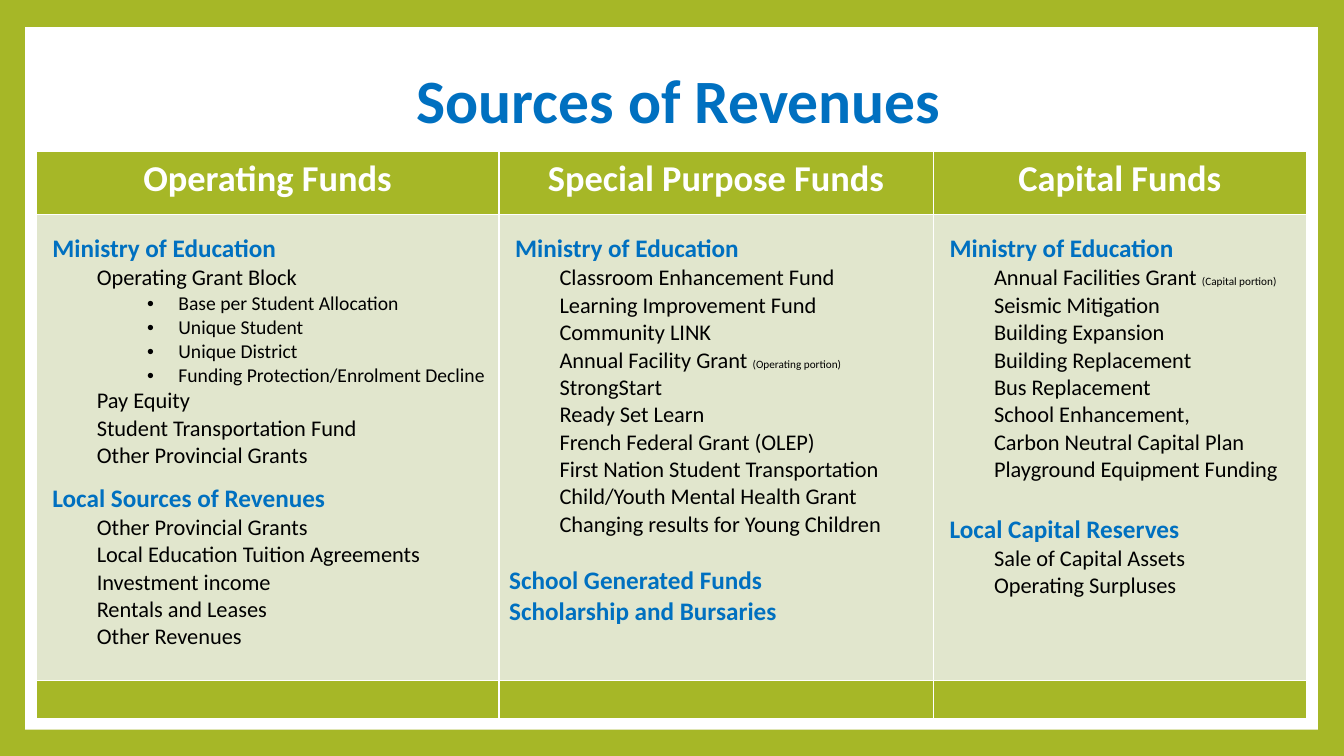
from lxml import etree
from pptx import Presentation
from pptx.dml.color import RGBColor
from pptx.enum.shapes import MSO_SHAPE
from pptx.enum.text import MSO_ANCHOR, MSO_AUTO_SIZE, PP_ALIGN
from pptx.oxml.ns import qn
from pptx.util import Inches, Pt

GREEN = RGBColor(0xA6, 0xB7, 0x27)
PALE_GREEN = RGBColor(0xE1, 0xE6, 0xCD)
BLUE = RGBColor(0x00, 0x70, 0xC0)
WHITE = RGBColor(0xFF, 0xFF, 0xFF)
BLACK = RGBColor(0x00, 0x00, 0x00)
FONT = "Calibri"

# Paragraph kinds: level, left margin, first-line indent, size, colour, bold
STYLES = {
    "source": (0, 0.06, 0, 18, BLUE, True),
    "fund": (1, 0, 0, 18, BLUE, True),
    "item": (1, 0.5, 0, 16, BLACK, False),
    "bullet": (2, 1.31, -0.31, 14, BLACK, False),
}

# Each column: heading, width, and groups of (kind, space before, lines)
COLUMNS = [
    ("Operating Funds", 4.59, [
        ("source", 0, ["Ministry of Education"]),
        ("item", 0, ["Operating Grant Block"]),
        ("bullet", 0, ["Base per Student Allocation", "Unique Student",
                       "Unique District", "Funding Protection/Enrolment Decline"]),
        ("item", 0, ["Pay Equity", "Student Transportation Fund",
                     "Other Provincial Grants"]),
        ("source", 9.8, ["Local Sources of Revenues"]),
        ("item", 0, ["Other Provincial Grants", "Local Education Tuition Agreements",
                     "Investment income", "Rentals and Leases", "Other Revenues"]),
    ]),
    ("Special Purpose Funds", 4.31, [
        ("source", 0, ["Ministry of Education"]),
        ("item", 0, ["Classroom Enhancement Fund", "Learning Improvement Fund",
                     "Community LINK", "Annual Facility Grant (Operating portion)",
                     "StrongStart", "Ready Set Learn", "French Federal Grant (OLEP)",
                     "First Nation Student Transportation",
                     "Child/Youth Mental Health Grant",
                     "Changing results for Young Children"]),
        ("fund", 19.5, ["School Generated Funds", "Scholarship and Bursaries"]),
    ]),
    ("Capital Funds", 3.7, [
        ("source", 0, ["Ministry of Education"]),
        ("item", 0, ["Annual Facilities Grant (Capital portion)", "Seismic Mitigation",
                     "Building Expansion", "Building Replacement", "Bus Replacement",
                     "School Enhancement,", "Carbon Neutral Capital Plan",
                     "Playground Equipment Funding"]),
        ("source", 22, ["Local Capital Reserves"]),
        ("item", 0, ["Sale of Capital Assets", "Operating Surpluses"]),
    ]),
]
ROW_HEIGHTS = [0.63, 4.62, 0.38]


def format_font(font, size, colour, bold):
    font.name, font.size, font.bold = FONT, Pt(size), bold
    font.color.rgb = colour


def add_background(page, left, top, width, height):
    page.background.fill.solid()
    page.background.fill.fore_color.rgb = GREEN
    panel = page.shapes.add_shape(MSO_SHAPE.RECTANGLE, left, top, width, height)
    panel.shadow.inherit = False
    panel.fill.solid()
    panel.fill.fore_color.rgb = WHITE
    panel.line.fill.background()
    # Send the panel behind the title
    page.shapes._spTree.insert(2, panel._element)


def add_title(page, left, top, width, height):
    title = page.shapes.title
    title.left, title.top, title.width, title.height = left, top, width, height
    frame = title.text_frame
    frame.text = "Sources of Revenues"
    frame.auto_size = MSO_AUTO_SIZE.NONE
    frame.vertical_anchor = MSO_ANCHOR.MIDDLE
    para = frame.paragraphs[0]
    para.alignment = PP_ALIGN.CENTER
    para.line_spacing = 0.9
    format_font(para.runs[0].font, 44, BLUE, True)


def write_line(para, kind, text, space):
    level, margin, indent, size, colour, bold = STYLES[kind]
    para.level = level
    para.alignment = PP_ALIGN.LEFT
    if space:
        para.space_before = Pt(space)
    properties = para._p.get_or_add_pPr()
    properties.set("marL", str(Inches(margin)))
    properties.set("indent", str(Inches(indent)))
    if kind == "bullet":
        font = etree.SubElement(properties, qn("a:buFont"))
        font.set("typeface", "Arial")
        etree.SubElement(properties, qn("a:buChar")).set("char", "•")
    # A closing "(... portion)" note is set small
    main, bracket, note = text.partition("(")
    if not note.endswith("portion)"):
        main, bracket, note = text, "", ""
    for words, points in ((main, size), (bracket + note, 8)):
        if words:
            span = para.add_run()
            span.text = words
            format_font(span.font, points, colour, bold)


def fill_cell(cell, colour):
    cell.fill.solid()
    cell.fill.fore_color.rgb = colour


def fill_column(table, index, heading, groups):
    header, body, footer = (table.cell(row, index) for row in range(3))

    # Heading
    fill_cell(header, GREEN)
    header.text_frame.text = heading
    para = header.text_frame.paragraphs[0]
    para.alignment = PP_ALIGN.CENTER
    format_font(para.runs[0].font, 26, WHITE, True)

    # Sources and their funds
    fill_cell(body, PALE_GREEN)
    body.margin_top = Inches(0.19)
    frame = body.text_frame
    para = frame.paragraphs[0]
    for kind, space, lines in groups:
        for number, text in enumerate(lines):
            if para is None:
                para = frame.add_paragraph()
            write_line(para, kind, text, space if number == 0 else 0)
            para = None

    # Closing band
    fill_cell(footer, GREEN)
    footer.margin_top = footer.margin_bottom = 0


def add_fund_table(page, left, top, width, height):
    table = page.shapes.add_table(
        len(ROW_HEIGHTS), len(COLUMNS), left, top, width, height).table
    table.horz_banding = False
    for row, row_height in zip(table.rows, ROW_HEIGHTS):
        row.height = Inches(row_height)
    for index, (heading, column_width, groups) in enumerate(COLUMNS):
        table.columns[index].width = Inches(column_width)
        fill_column(table, index, heading, groups)


def main():
    deck = Presentation()
    deck.slide_width, deck.slide_height = Inches(13.33), Inches(7.5)
    page = deck.slides.add_slide(deck.slide_layouts[5])
    add_background(page, Inches(0.25), Inches(0.27), Inches(12.82), Inches(6.97))
    add_title(page, Inches(0.5), Inches(0.67), Inches(12.47), Inches(0.72))
    add_fund_table(page, Inches(0.36), Inches(1.5), Inches(12.6), Inches(5.63))
    deck.save("out.pptx")


if __name__ == "__main__":
    main()
